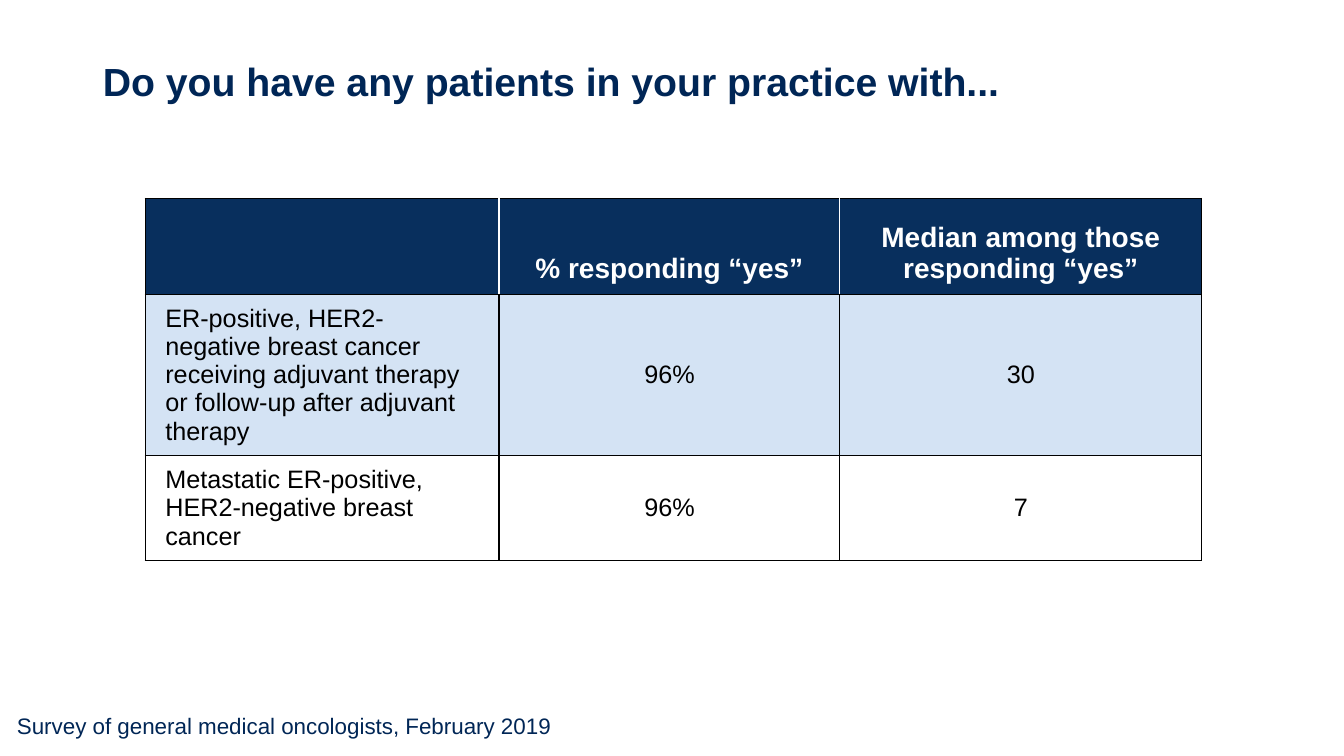
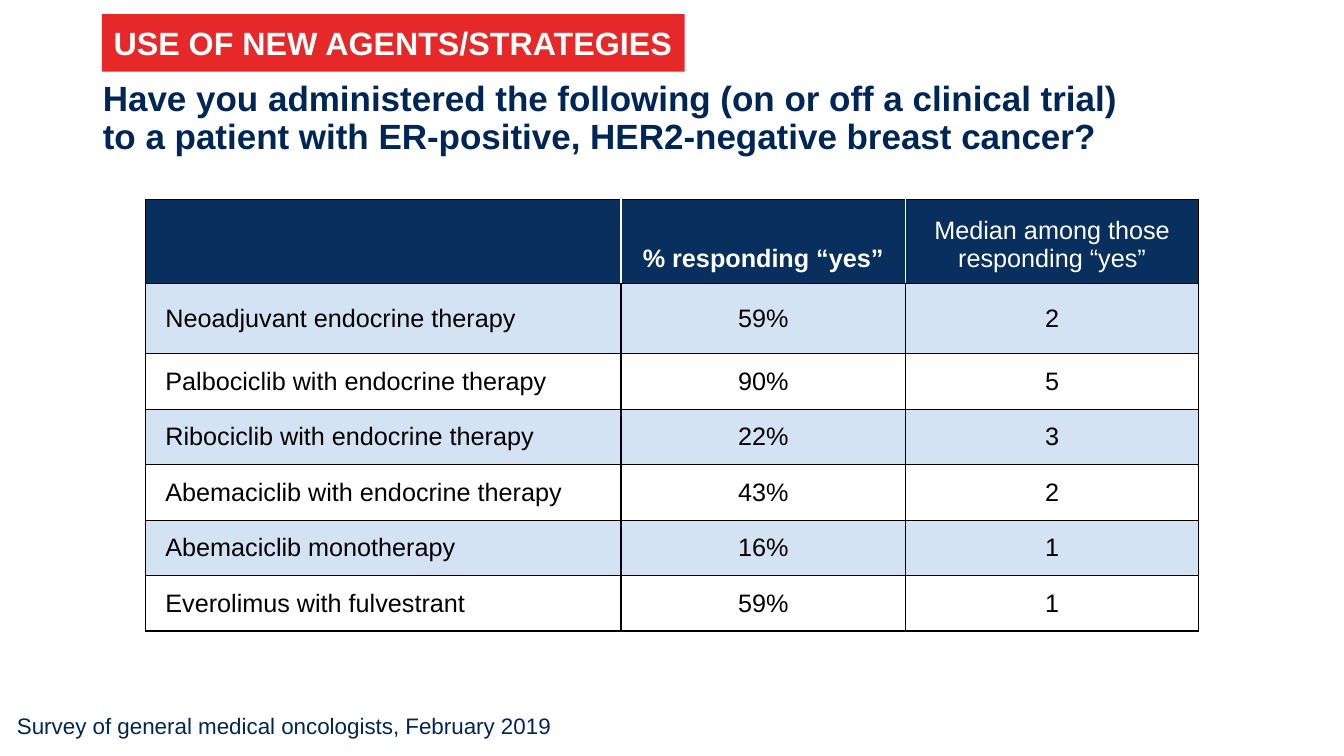
from lxml.etree import SubElement
from pptx import Presentation
from pptx.dml.color import RGBColor
from pptx.enum.shapes import MSO_SHAPE
from pptx.enum.text import MSO_ANCHOR, MSO_AUTO_SIZE, PP_ALIGN
from pptx.oxml import parse_xml
from pptx.oxml.ns import nsdecls, qn
from pptx.util import Pt

PX = 9144
FONT = "Arial"
NAVY, HEADER, BAND = "002656", "082F5D", "D4E3F4"
RED, WHITE, BLACK = "E62829", "FFFFFF", "000000"
FOOTER = "Survey of general medical oncologists, February 2019"


def px(length):
    return length * PX


def color(value):
    return RGBColor.from_string(value)


def format_text(frame, size, ink, bold=False, align=PP_ALIGN.LEFT):
    for para in frame.paragraphs:
        para.alignment = align
        for span in para.runs:
            span.font.name = FONT
            span.font.size = Pt(size)
            span.font.bold = bold
            span.font.color.rgb = color(ink)


def add_footer(layout, page):
    box = page.shapes.add_textbox(px(7), px(702), px(570), px(37))
    box.text_frame.text = FOOTER
    format_text(box.text_frame, 16, NAVY)
    box.element.xpath("./p:nvSpPr/p:cNvPr")[0].set("id", "20")
    layout.shapes.element.append(box.element)


def set_title(page, text, top, height, size):
    title = page.shapes.title
    title.left, title.top, title.width, title.height = px(92), px(top), px(1150), px(height)
    frame = title.text_frame
    frame.text = text
    frame.word_wrap = True
    frame.auto_size = MSO_AUTO_SIZE.NONE
    frame.vertical_anchor = MSO_ANCHOR.MIDDLE
    frame.paragraphs[0].line_spacing = 0.9
    format_text(frame, size, NAVY, bold=True)


def add_tag(page, text):
    tag = page.shapes.add_shape(MSO_SHAPE.RECTANGLE, px(101), px(14), px(578), px(57))
    tag.shadow.inherit = False
    tag.fill.solid()
    tag.fill.fore_color.rgb = color(RED)
    tag.line.fill.background()
    frame = tag.text_frame
    frame.text = text
    frame.word_wrap = False
    frame.vertical_anchor = MSO_ANCHOR.MIDDLE
    format_text(frame, 23, WHITE, bold=True, align=PP_ALIGN.CENTER)


def set_borders(cell, left, right):
    properties = cell._tc.get_or_add_tcPr()
    edges = (("L", left), ("R", right), ("T", BLACK), ("B", BLACK))
    for position, (edge, ink) in enumerate(edges):
        line = parse_xml(f'<a:ln{edge} {nsdecls("a")} w="{Pt(1)}"/>')
        fill = SubElement(line, qn("a:solidFill"))
        SubElement(fill, qn("a:srgbClr")).set("val", ink)
        properties.insert(position, line)


def style_cell(cell, fill, anchor):
    cell.fill.solid()
    cell.fill.fore_color.rgb = color(fill)
    cell.vertical_anchor = anchor
    cell.margin_left = cell.margin_right = px(20)
    cell.margin_top = cell.margin_bottom = px(10)


def add_survey_table(page, top, widths, heights, rows, header_size, header_bold):
    frame = page.shapes.add_table(len(rows), len(widths), px(144), px(top),
                                  px(sum(widths)), px(sum(heights)))
    table = frame.table
    table.horz_banding = False
    for column, width in zip(table.columns, widths):
        column.width = px(width)
    for row, height in zip(table.rows, heights):
        row.height = px(height)
    last = len(widths) - 1
    for r, values in enumerate(rows):
        for c, value in enumerate(values):
            cell = table.cell(r, c)
            cell.text = value
            if r == 0:
                style_cell(cell, HEADER, MSO_ANCHOR.BOTTOM)
                set_borders(cell, WHITE if c > 0 else BLACK, WHITE if c < last else BLACK)
                format_text(cell.text_frame, header_size, WHITE, header_bold[c], PP_ALIGN.CENTER)
            else:
                style_cell(cell, BAND if r % 2 else WHITE, MSO_ANCHOR.MIDDLE)
                set_borders(cell, BLACK, BLACK)
                align = PP_ALIGN.CENTER if c else PP_ALIGN.LEFT
                format_text(cell.text_frame, 18, BLACK, align=align)


def build_patients(page):
    set_title(page, "Do you have any patients in your practice with...", 0, 166, 28)
    rows = [
        ("", "% responding “yes”", "Median among those responding “yes”"),
        ("ER-positive, HER2-negative breast cancer receiving adjuvant therapy "
         "or follow-up after adjuvant therapy", "96%", "30"),
        ("Metastatic ER-positive, HER2-negative breast cancer", "96%", "7"),
    ]
    add_survey_table(page, 197, (351, 338, 359), (95, 160, 104), rows, 20, (True, True, True))


def build_agents(page):
    set_title(page, "Have you administered the following (on or off a clinical trial)\v"
              "to a patient with ER-positive, HER2-negative breast cancer?", 71, 95, 25)
    rows = [
        ("", "% responding “yes”", "Median among those\nresponding “yes”"),
        ("Neoadjuvant endocrine therapy", "59%", "2"),
        ("Palbociclib with endocrine therapy", "90%", "5"),
        ("Ribociclib with endocrine therapy", "22%", "3"),
        ("Abemaciclib with endocrine therapy", "43%", "2"),
        ("Abemaciclib monotherapy", "16%", "1"),
        ("Everolimus with fulvestrant", "59%", "1"),
    ]
    heights = [83, 70] + [55] * 5
    add_survey_table(page, 198, (472, 282, 291), heights, rows, 18, (True, True, False))
    add_tag(page, "USE OF NEW AGENTS/STRATEGIES")


def main():
    deck = Presentation()
    deck.slide_width, deck.slide_height = px(1333), px(750)
    layout = deck.slide_layouts.get_by_name("Title Only")
    patients, agents = (deck.slides.add_slide(layout) for _ in range(2))
    add_footer(layout, patients)
    build_patients(patients)
    build_agents(agents)
    deck.save("out.pptx")


if __name__ == "__main__":
    main()
